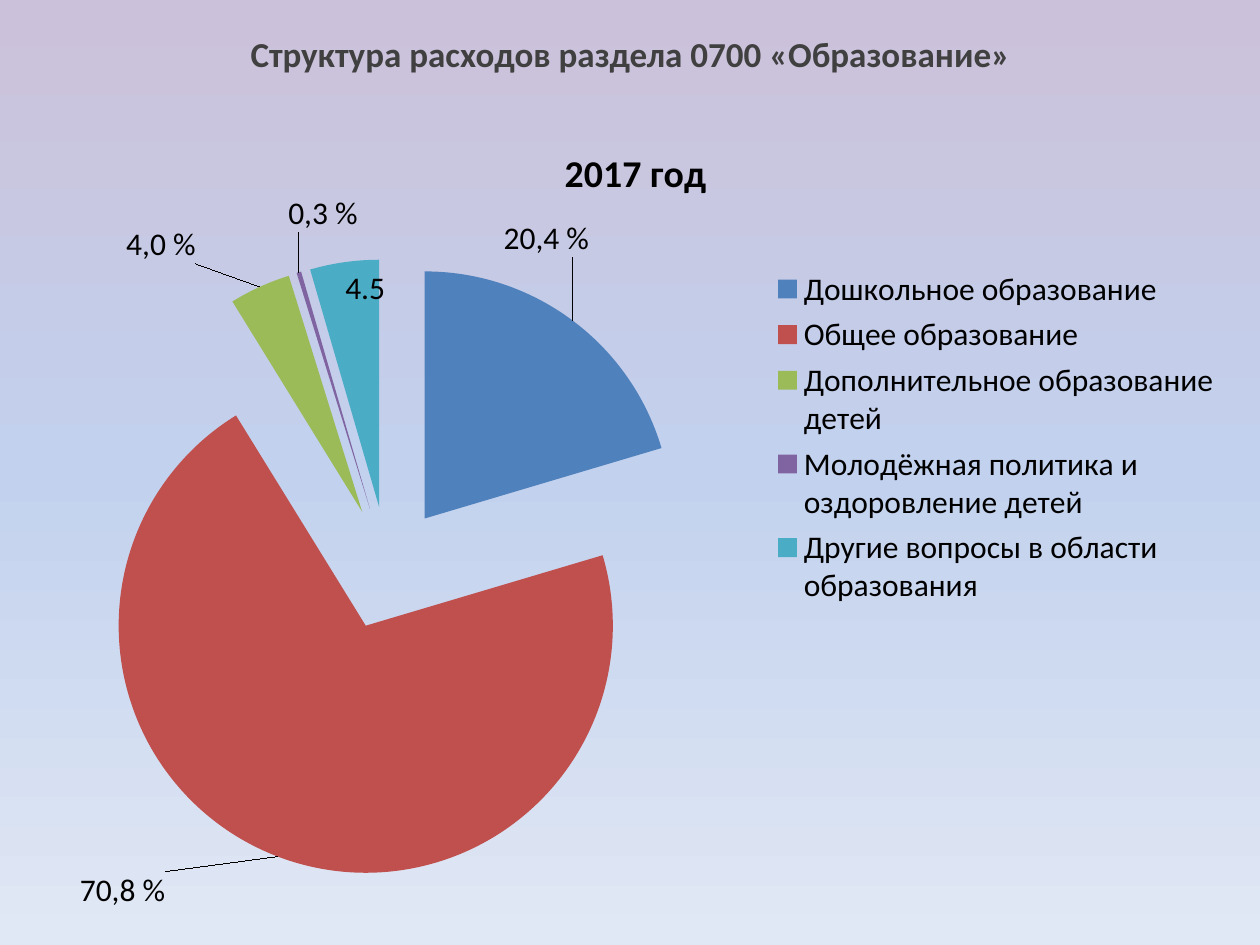
from copy import deepcopy

from lxml import etree
from pptx import Presentation
from pptx import util as u
from pptx.chart.data import CategoryChartData
from pptx.dml.color import RGBColor
from pptx.enum import chart as ch, text
from pptx.oxml.ns import qn

BLACK = RGBColor(0, 0, 0)
GREY = RGBColor(0x40, 0x40, 0x40)
SKY = [RGBColor(0xCC, 0xC1, 0xDA), RGBColor(0xC2, 0xD1, 0xED),
       RGBColor(0xE1, 0xE8, 0xF5)]
BLUE = RGBColor(0x4F, 0x81, 0xBD)
RED = RGBColor(0xC0, 0x50, 0x4D)
GREEN = RGBColor(0x9B, 0xBB, 0x59)
PURPLE = RGBColor(0x80, 0x64, 0xA2)
TEAL = RGBColor(0x4B, 0xAC, 0xC6)

# Name, value, colour, label text, label shift as a share of the chart
PARTS = [
    ("Дошкольное образование", 20.4, BLUE, "20,4 %", (-0.06, -0.07)),
    ("Общее образование", 70.8, RED, "70,8 %", (-0.09, 0.01)),
    ("Дополнительное образование детей", 4, GREEN, "4,0 %", (-0.05, -0.02)),
    ("Молодёжная политика и оздоровление детей", 0.3, PURPLE, "0,3 %",
     (0.05, -0.04)),
    ("Другие вопросы в области образования", 4.5, TEAL, None, None),
]


def place(prev, **vals):
    """Put a manual layout right after the element prev."""
    lay = etree.Element(qn("c:layout"))
    man = etree.SubElement(lay, qn("c:manualLayout"))
    for tag, val in vals.items():
        etree.SubElement(man, qn("c:" + tag)).set("val", str(val))
    prev.addnext(lay)


class Deck:
    font = "Calibri"

    def __init__(self, prs):
        self.slide = prs.slides.add_slide(prs.slide_layouts[6])

    def style(self, font, size, color=BLACK, bold=False):
        font.name, font.size, font.bold = self.font, u.Pt(size), bold
        font.color.rgb = color

    def backdrop(self, colors):
        fill = self.slide.background.fill
        fill.gradient()
        fill.gradient_angle = 270
        stops = self.slide.element.find(".//" + qn("a:gsLst"))
        stops.append(deepcopy(stops[-1]))
        for i, (stop, color) in enumerate(zip(fill.gradient_stops, colors)):
            stop.color.rgb = color
            stop.position = i / (len(colors) - 1)

    def heading(self, words, box):
        frame = self.slide.shapes.add_textbox(*map(u.Inches, box)).text_frame
        frame.word_wrap = True
        par = frame.paragraphs[0]
        par.alignment = text.PP_ALIGN.CENTER
        run = par.add_run()
        run.text = words
        self.style(run.font, 20, GREY, True)

    def label(self, point, words, shift):
        tag = point.data_label
        run = tag.text_frame.paragraphs[0].add_run()
        run.text = words
        self.style(run.font, 18)
        tag.position = ch.XL_LABEL_POSITION.OUTSIDE_END
        return shift

    def pie(self, title, parts, box):
        data = CategoryChartData()
        data.categories = [part[0] for part in parts]
        data.add_series(title, [part[1] for part in parts])
        chart = self.slide.shapes.add_chart(
            ch.XL_CHART_TYPE.PIE, *map(u.Inches, box), data).chart
        self.style(chart.font, 18)
        root = chart.element

        # Title
        chart.has_title = True
        run = chart.chart_title.text_frame.paragraphs[0].add_run()
        run.text = title
        self.style(run.font, 21.6, bold=True)

        # Legend
        chart.has_legend = True
        chart.legend.position = ch.XL_LEGEND_POSITION.CORNER
        chart.legend.include_in_layout = False
        self.style(chart.legend.font, 18)

        # Slices and their labels
        plot = chart.plots[0]
        plot.vary_by_categories = True
        row = plot.series[0]
        tags = row.data_labels
        tags.show_value = True
        tags.position = ch.XL_LABEL_POSITION.INSIDE_END
        self.style(tags.font, 18)
        for point, (_, _, color, words, shift) in zip(
                (row.points[i] for i in range(len(parts))), parts):
            point.format.fill.solid()
            point.format.fill.fore_color.rgb = color
            if words:
                self.label(point, words, shift)
        shifts = [part[4] for part in parts if part[4]]
        for tag, (x, y) in zip(root.iter(qn("c:dLbl")), shifts):
            place(tag.find(qn("c:idx")), x=x, y=y)

        # Gap between slices
        gap = etree.Element(qn("c:explosion"))
        gap.set("val", "25")
        root.find(".//" + qn("c:dPt")).addprevious(gap)

        # Places of plot and legend
        area = root.find(".//" + qn("c:plotArea"))
        legend = root.find(".//" + qn("c:legend"))
        for node in (area, legend):
            for old in node.findall(qn("c:layout")):
                node.remove(old)
        edge = dict(xMode="edge", yMode="edge")
        place(legend.find(qn("c:legendPos")), **edge,
              x=0.6, y=0.18, w=0.39, h=0.43)
        mark = etree.Element(qn("c:layout"))
        area.insert(0, mark)
        place(mark, layoutTarget="inner", **edge,
              x=0.044, y=0.176, w=0.506, h=0.759)
        area.remove(mark)


def main():
    prs = Presentation()
    prs.slide_width, prs.slide_height = u.Inches(10), u.Inches(7.5)
    deck = Deck(prs)
    deck.backdrop(SKY)
    deck.heading("Структура расходов раздела 0700 «Образование»",
                 (0.28, 0.21, 9.45, 0.55))
    deck.pie("2017 год", PARTS, (0.2, 0.92, 9.69, 6.46))
    prs.save("out.pptx")


if __name__ == "__main__":
    main()
